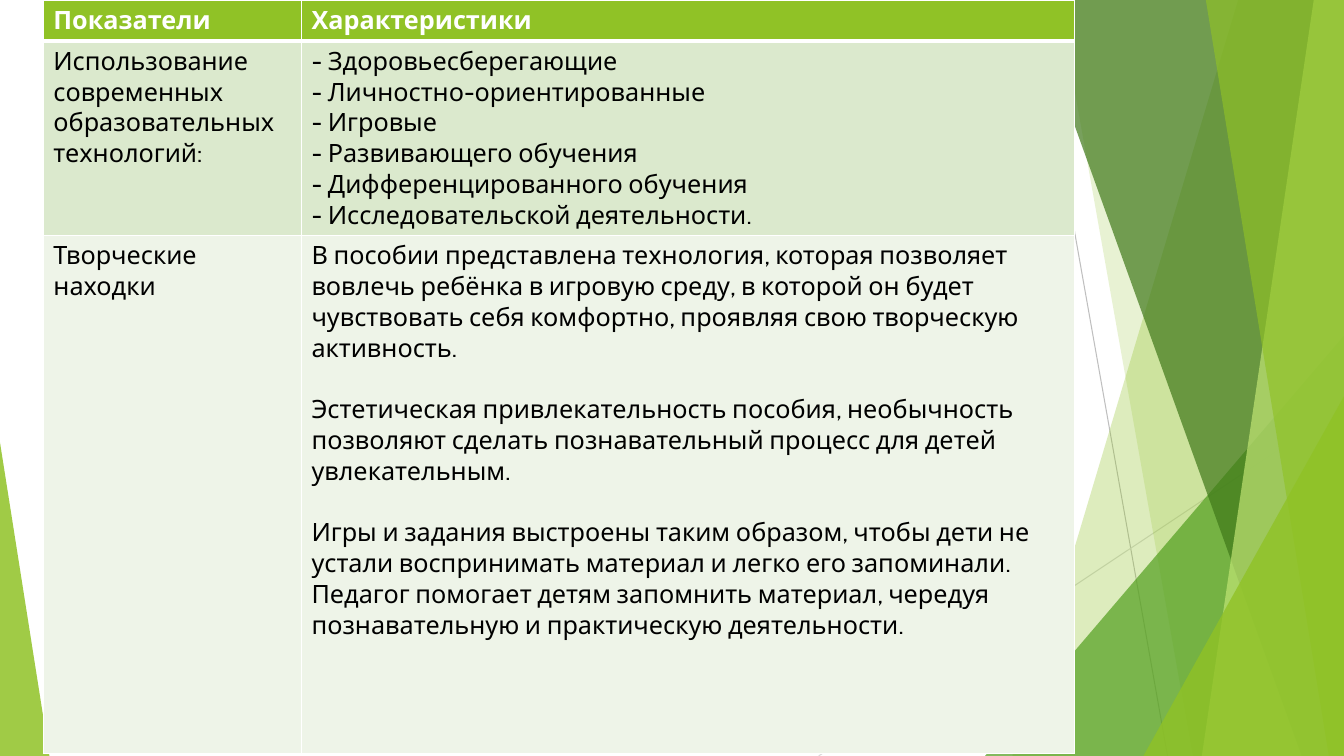
from lxml.etree import SubElement
from pptx import Presentation
from pptx.dml.color import RGBColor
from pptx.enum.shapes import MSO_CONNECTOR, MSO_SHAPE
from pptx.oxml.ns import qn
from pptx.util import Inches, Pt

WIDTH, HEIGHT = 13.33, 7.5

WHITE = RGBColor(0xFF, 0xFF, 0xFF)
BLACK = RGBColor(0, 0, 0)
GREY = RGBColor(0xBF, 0xBF, 0xBF)
LIGHT_GREY = RGBColor(0xD9, 0xD9, 0xD9)
LIME = RGBColor(0x90, 0xC2, 0x26)
PALE_LIME = RGBColor(0xC0, 0xE4, 0x74)
GREEN = RGBColor(0x54, 0xA0, 0x21)
DARK_GREEN = RGBColor(0x3F, 0x78, 0x19)
BAND_DARK = RGBColor(0xDB, 0xE9, 0xCD)
BAND_LIGHT = RGBColor(0xEE, 0xF4, 0xE8)

# Bands reaching the right edge: x at the top, x at the bottom, colour, opacity in percent
BACK_BANDS = [(12.28, 10.04, LIME, 30), (10.5, 11.83, LIME, 20)]
FRONT_BANDS = [
    (10.21, 12.91, DARK_GREEN, 70),
    (13.03, 11.92, PALE_LIME, 70),
    (11.96, 13.18, LIME, 65),
]

COLUMN_WIDTHS = [2.56, 7.67]
ROW_HEIGHTS = [0.39, 1.86, 5.14]
ROW_FILLS = [LIME, BAND_DARK, BAND_LIGHT]
ROWS = [
    [["Показатели"], ["Характеристики"]],
    [
        ["Использование современных образовательных технологий:"],
        [
            "- Здоровьесберегающие",
            "- Личностно-ориентированные",
            "- Игровые",
            "- Развивающего обучения",
            "- Дифференцированного обучения",
            "- Исследовательской деятельности.",
        ],
    ],
    [
        ["Творческие находки"],
        [
            "В пособии представлена технология, которая позволяет вовлечь ребёнка "
            "в игровую среду, в которой он будет чувствовать себя комфортно, "
            "проявляя свою творческую активность.",
            "Эстетическая привлекательность пособия, необычность позволяют сделать "
            "познавательный процесс для детей увлекательным.",
            "Игры и задания выстроены таким образом, чтобы дети не устали "
            "воспринимать материал и легко его запоминали. Педагог помогает детям "
            "запомнить материал, чередуя познавательную и практическую деятельности.",
        ],
    ],
]


class SlideBuilder:
    font = {"name": "Cabin", "size": Pt(18)}
    paragraph_gap = Pt(22)

    def __init__(self, slide):
        self.shapes = slide.shapes

    def line(self, start, end, color):
        connector = self.shapes.add_connector(
            MSO_CONNECTOR.STRAIGHT, *map(Inches, start + end))
        connector.line.color.rgb = color
        connector.line.width = Pt(0.75)
        SubElement(connector._element.spPr, qn("a:effectLst"))

    def paint(self, shape, color, opacity):
        shape.shadow.inherit = False
        shape.line.fill.background()
        shape.fill.solid()
        shape.fill.fore_color.rgb = color
        color_element = shape._element.spPr.find(".//" + qn("a:srgbClr"))
        SubElement(color_element, qn("a:alpha"), val=str(opacity * 1000))

    def band(self, top_x, bottom_x, color, opacity):
        corners = [(WIDTH, 0), (WIDTH, HEIGHT), (bottom_x, HEIGHT)]
        builder = self.shapes.build_freeform(Inches(top_x), 0)
        builder.add_line_segments([(Inches(x), Inches(y)) for x, y in corners])
        self.paint(builder.convert_to_shape(), color, opacity)

    def corner_triangle(self, left, top, width, apex, color, opacity):
        """Triangle standing on the bottom edge; apex is 0 at its left, 1 at its right."""
        triangle = self.shapes.add_shape(
            MSO_SHAPE.ISOSCELES_TRIANGLE,
            *map(Inches, (left, top, width, HEIGHT - top)))
        triangle.adjustments[0] = apex
        self.paint(triangle, color, opacity)

    def borders(self, cell, row):
        widths = {"lnL": 1, "lnR": 1, "lnT": 3 if row == 1 else 1,
                  "lnB": 3 if row == 0 else 1}
        properties = cell._tc.get_or_add_tcPr()
        for side, width in widths.items():
            border = SubElement(properties, qn("a:" + side), w=str(Pt(width)))
            fill = SubElement(border, qn("a:solidFill"))
            SubElement(fill, qn("a:srgbClr"), val=str(WHITE))

    def cell_text(self, cell, texts, header, gap):
        font = {**self.font, "bold": header}
        for index, text in enumerate(texts):
            frame = cell.text_frame
            paragraph = frame.add_paragraph() if index else frame.paragraphs[0]
            if index:
                paragraph.space_before = gap
            run = paragraph.add_run()
            run.text = text
            for name, value in font.items():
                setattr(run.font, name, value)
            run.font.color.rgb = WHITE if header else BLACK

    def table(self, left, top):
        table = self.shapes.add_table(
            len(ROWS), len(COLUMN_WIDTHS), Inches(left), Inches(top),
            Inches(sum(COLUMN_WIDTHS)), Inches(sum(ROW_HEIGHTS))).table
        for column, width in zip(table.columns, COLUMN_WIDTHS):
            column.width = Inches(width)
        for row, height in zip(table.rows, ROW_HEIGHTS):
            row.height = Inches(height)
        for row, contents in enumerate(ROWS):
            gap = self.paragraph_gap if row == 2 else Pt(0)
            for column, texts in enumerate(contents):
                cell = table.cell(row, column)
                self.borders(cell, row)
                cell.fill.solid()
                cell.fill.fore_color.rgb = ROW_FILLS[row]
                self.cell_text(cell, texts, row == 0, gap)


def main():
    presentation = Presentation()
    presentation.slide_width = Inches(WIDTH)
    presentation.slide_height = Inches(HEIGHT)
    builder = SlideBuilder(
        presentation.slides.add_slide(presentation.slide_layouts[6]))

    builder.line((10.25, 0), (11.58, HEIGHT), GREY)
    builder.line((WIDTH, 4.03), (8.12, HEIGHT), LIGHT_GREY)
    for band in BACK_BANDS:
        builder.band(*band)
    builder.corner_triangle(9.77, 3.33, 3.56, 1, GREEN, 72)
    for band in FRONT_BANDS:
        builder.band(*band)
    builder.corner_triangle(11.34, 3.93, 1.99, 1, LIME, 80)
    builder.corner_triangle(0, 4.39, 0.49, 0, LIME, 85)
    builder.table(0.43, 0)

    presentation.save("out.pptx")


if __name__ == "__main__":
    main()
